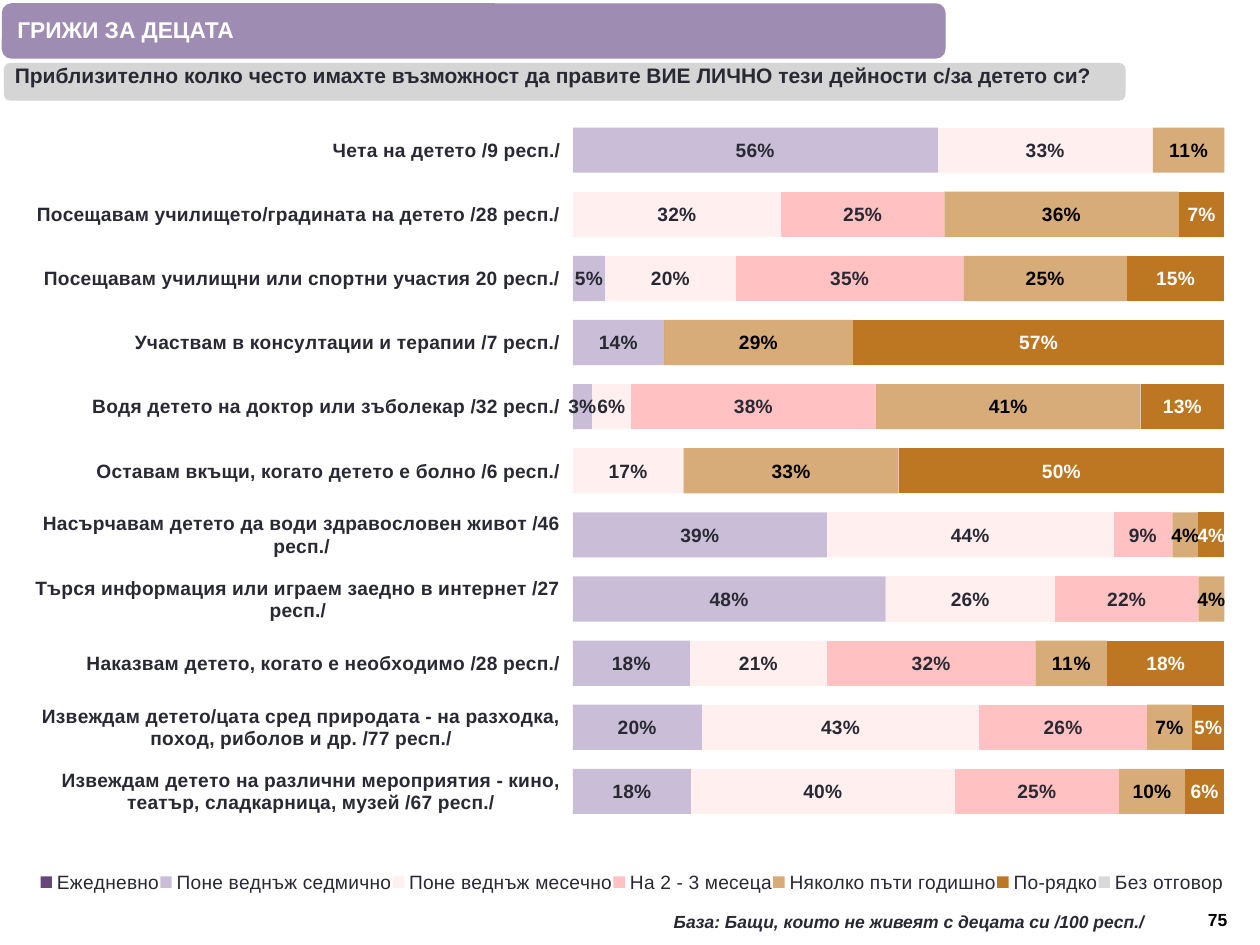
from lxml.etree import SubElement
from pptx import Presentation
from pptx.chart.data import CategoryChartData
from pptx.dml.color import RGBColor
from pptx.enum.chart import XL_CHART_TYPE as ChartType, XL_LEGEND_POSITION as LegendSpot
from pptx.enum.chart import XL_TICK_MARK as TickMark
from pptx.enum.shapes import MSO_SHAPE as Preset
from pptx.enum.text import MSO_ANCHOR as Anchor, PP_ALIGN as Align
from pptx.oxml import parse_xml
from pptx.oxml.ns import nsdecls, qn
from pptx.util import Cm, Pt

COLORS = {
    "text": "292934", "black": "000000", "white": "FFFFFF",
    "title": "9E8CB3", "question": "D5D5D5",
    "daily": "68467A", "weekly": "B3A2C7", "monthly": "FFEFEF",
    "quarterly": "FFC1C1", "ochre": "BD7621", "none": "D9D9D9",
}

CATEGORIES = [
    "Чета на детето /9 респ./",
    "Посещавам училището/градината на детето /28 респ./",
    "Посещавам училищни или спортни участия 20 респ./",
    "Участвам в консултации и терапии /7 респ./",
    "Водя детето на доктор или зъболекар /32 респ./",
    "Оставам вкъщи, когато детето е болно /6 респ./",
    "Насърчавам детето да води здравословен живот /46 респ./",
    "Търся информация или играем заедно в интернет /27 респ./",
    "Наказвам детето, когато е необходимо /28 респ./",
    "Извеждам детето/цата сред природата - на разходка, поход, риболов и др. /77 респ./",
    "Извеждам детето на различни мероприятия - кино, театър, сладкарница, музей /67 респ./",
]

NO_ANSWERS = [None] * len(CATEGORIES)

# name, values, fill, opacity in percent, label colour
SERIES = [
    ("Ежедневно", NO_ANSWERS, "daily", 100, "white"),
    ("Поне веднъж седмично",
     [0.56, None, 0.05, 0.14, 0.03, None, 0.39, 0.48, 0.18, 0.2, 0.18], "weekly", 70, "text"),
    ("Поне веднъж месечно",
     [0.33, 0.32, 0.2, None, 0.06, 0.17, 0.44, 0.26, 0.21, 0.43, 0.4], "monthly", 100, "text"),
    ("На 2 - 3 месеца",
     [None, 0.25, 0.35, None, 0.38, None, 0.09, 0.22, 0.32, 0.26, 0.25], "quarterly", 100, "text"),
    ("Няколко пъти годишно",
     [0.11, 0.36, 0.25, 0.29, 0.41, 0.33, 0.04, 0.04, 0.11, 0.07, 0.1], "ochre", 60, "black"),
    ("По-рядко",
     [None, 0.07, 0.15, 0.57, 0.13, 0.5, 0.04, None, 0.18, 0.05, 0.06], "ochre", 100, "white"),
    ("Без отговор", NO_ANSWERS, "none", 100, "black"),
]


class SurveyPage:
    """Hold the shared style and the page being drawn."""

    font_name = "Arial"

    def __init__(self, page):
        self.page = page

    def color(self, name):
        return RGBColor.from_string(COLORS[name])

    def style(self, font, size, color, bold=True, italic=False):
        font.name = self.font_name
        font.size = Pt(size)
        font.bold = bold
        font.italic = italic
        font.color.rgb = self.color(color)

    def banner(self, left, top, width, height, fill, outlined=False):
        shape = self.page.shapes.add_shape(
            Preset.FLOWCHART_ALTERNATE_PROCESS, Cm(left), Cm(top), Cm(width), Cm(height))
        shape.shadow.inherit = False
        shape.fill.solid()
        shape.fill.fore_color.rgb = self.color(fill)
        if outlined:
            shape.line.color.rgb = self.color(fill)
            shape.line.width = Pt(0.75)
        else:
            shape.line.fill.background()

    def text(self, left, top, width, height, words, size, color="text", italic=False,
             align=Align.LEFT, anchor=Anchor.TOP, wrap=True):
        box = self.page.shapes.add_textbox(Cm(left), Cm(top), Cm(width), Cm(height))
        frame = box.text_frame
        frame.word_wrap = wrap
        frame.vertical_anchor = anchor
        frame.text = words
        para = frame.paragraphs[0]
        para.alignment = align
        self.style(para.runs[0].font, size, color, italic=italic)

    def layout(self, x, y, width, height, inner=False):
        target = '<c:layoutTarget val="inner"/>' if inner else ""
        return parse_xml(
            f'<c:layout {nsdecls("c")}><c:manualLayout>{target}'
            '<c:xMode val="edge"/><c:yMode val="edge"/>'
            f'<c:x val="{x}"/><c:y val="{y}"/><c:w val="{width}"/><c:h val="{height}"/>'
            '</c:manualLayout></c:layout>')

    def chart(self, left, top, width, height):
        data = CategoryChartData(number_format="0%")
        data.categories = CATEGORIES
        for name, values, *_ in SERIES:
            data.add_series(name, values)
        chart = self.page.shapes.add_chart(
            ChartType.BAR_STACKED_100, Cm(left), Cm(top), Cm(width), Cm(height), data).chart
        chart.has_title = False
        self.style(chart.font, 9, "black")

        plot = chart.plots[0]
        plot.gap_width = 42
        plot.overlap = 100
        plot.vary_by_categories = False
        for series, (_, _, fill, opacity, label_color) in zip(plot.series, SERIES):
            self.bars(series, fill, opacity, label_color)

        chart.value_axis.visible = False
        chart.value_axis.has_major_gridlines = False
        axis = chart.category_axis
        axis.reverse_order = True
        axis.major_tick_mark = TickMark.OUTSIDE
        axis.format.line.color.rgb = self.color("white")
        self.style(axis.tick_labels.font, 11, "text")

        chart.has_legend = True
        legend = chart.legend
        legend.position = LegendSpot.BOTTOM
        legend.include_in_layout = False
        self.style(legend.font, 11, "text", bold=False)

        area = chart.element.find(".//" + qn("c:plotArea"))
        for old in area.findall(qn("c:layout")):
            area.remove(old)
        area.insert(0, self.layout(0.45, 0.012, 0.55, 0.843, inner=True))
        key = chart.element.find(".//" + qn("c:legend"))
        for old in key.findall(qn("c:layout")):
            key.remove(old)
        key.find(qn("c:legendPos")).addnext(self.layout(0, 0.9, 1, 0.05))

    def bars(self, series, fill, opacity, label_color):
        series.invert_if_negative = False
        series.format.fill.solid()
        series.format.fill.fore_color.rgb = self.color(fill)
        if opacity < 100:
            tint = series.format.fill._xPr.find(".//" + qn("a:srgbClr"))
            SubElement(tint, qn("a:alpha"), val=str(opacity * 1000))
        labels = series.data_labels
        labels.show_value = True
        labels.number_format = "0%"
        labels.number_format_is_linked = False
        self.style(labels.font, 11, label_color)


def main():
    deck = Presentation()
    deck.slide_width, deck.slide_height = Cm(25.4), Cm(19.05)
    survey = SurveyPage(deck.slides.add_slide(deck.slide_layouts[6]))
    survey.text(24.1, 18.21, 0.94, 0.69, "75", 10, "black", wrap=False)
    survey.banner(0.05, 0.08, 19, 1.09, "title", outlined=True)
    survey.banner(0.08, 1.27, 22.61, 0.76, "question")
    survey.chart(0.71, 2.18, 24, 16.87)
    survey.text(0.05, 1.14, 22.25, 0.76,
                "Приблизително колко често имахте възможност да правите ВИЕ ЛИЧНО "
                "тези дейности с/за детето си?", 12)
    survey.text(0.1, 0.15, 22.3, 0.89, "ГРИЖИ ЗА ДЕЦАТА", 13, "white", anchor=Anchor.MIDDLE)
    survey.text(13.28, 18.24, 10.08, 0.69, "База: Бащи, които не живеят с децата си /100 респ./",
                10, italic=True, align=Align.CENTER, wrap=False)
    deck.save("out.pptx")


if __name__ == "__main__":
    main()
